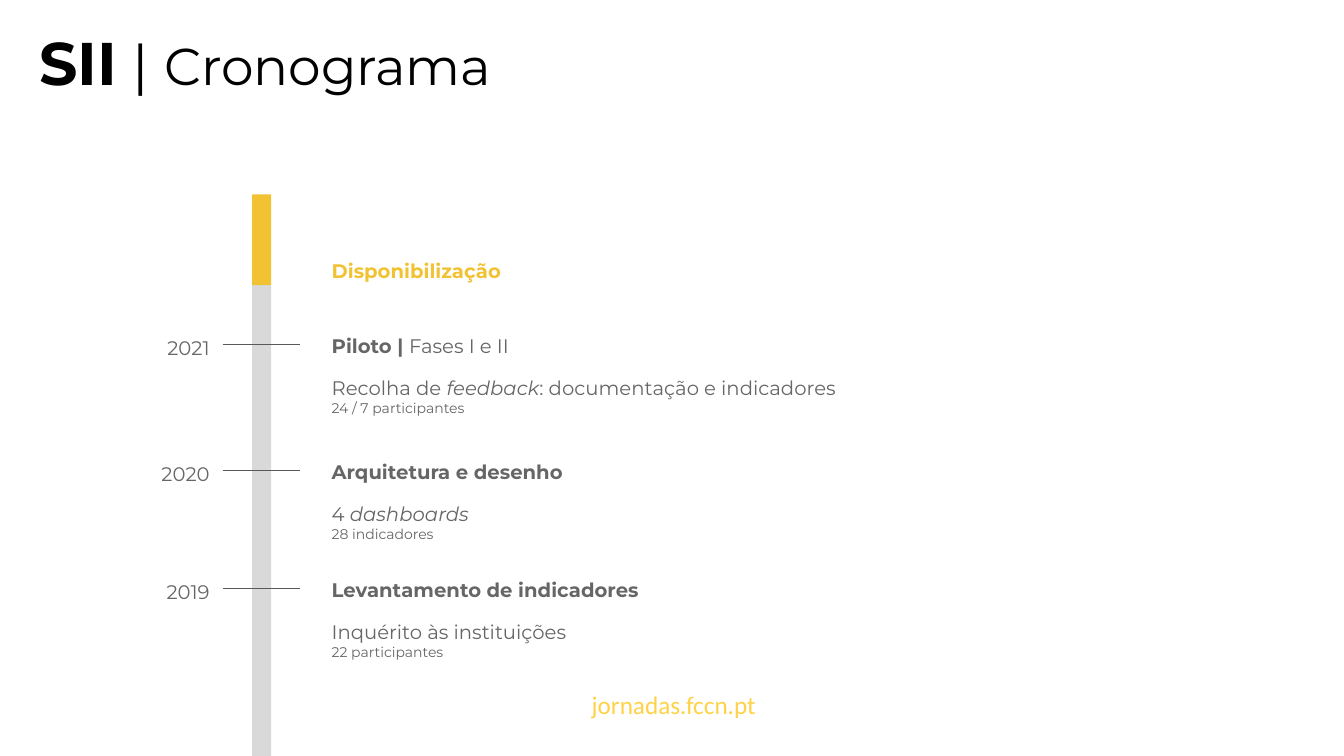
from dataclasses import dataclass

from lxml import etree
from pptx import Presentation
from pptx.dml.color import RGBColor
from pptx.enum.shapes import MSO_CONNECTOR, MSO_SHAPE
from pptx.enum.text import MSO_ANCHOR as Anchor, PP_ALIGN as Align
from pptx.oxml.ns import qn
from pptx.util import Emu, Pt

PX = 9144  # EMU per px, 100 px to the inch
COLORS = {
    "title": "000000",
    "text": "666666",
    "tick": "595959",
    "bar": "D9D9D9",
    "accent": "F1C232",
    "footer": "FFD246",
}
BAR_X, BAR_W = 250, 19
TICK_X1, TICK_X2 = 221, 298
TEXT_X = 316


@dataclass(frozen=True)
class Span:
    text: str
    size: int = 14
    bold: bool = False
    italic: bool = False
    color: str = "text"
    font: str = "Montserrat"


@dataclass(frozen=True)
class Box:
    x: int
    y: int
    w: int
    h: int

    def emu(self) -> list[Emu]:
        return [px(v) for v in (self.x, self.y, self.w, self.h)]


@dataclass(frozen=True)
class Milestone:
    year: str
    y: int
    heading: list[Span]
    detail: list[Span]
    note: str


MILESTONES = [
    Milestone("2021", 342, [Span("Piloto | ", bold=True), Span("Fases I e II")],
              [Span("Recolha de "), Span("feedback", italic=True),
               Span(": documentação e indicadores")],
              "24 / 7 participantes"),
    Milestone("2020", 467, [Span("Arquitetura e desenho", bold=True)],
              [Span("4 "), Span("dashboards", italic=True)],
              "28 indicadores"),
    Milestone("2019", 584, [Span("Levantamento de indicadores", bold=True)],
              [Span("Inquérito às instituições")],
              "22 participantes"),
]


def px(value: int) -> Emu:
    return Emu(value * PX)


def rgb(name: str) -> RGBColor:
    return RGBColor.from_string(COLORS[name])


def add_text(slide, box: Box, lines: list[list[Span]], inset: tuple[int, int] = (13, 13),
             anchor=Anchor.TOP, align=Align.LEFT, spacing: float = 1.0) -> None:
    """Add a text box with one paragraph per list of spans."""
    tf = slide.shapes.add_textbox(*box.emu()).text_frame
    tf.word_wrap = True
    tf.vertical_anchor = anchor
    tf.margin_left = tf.margin_right = px(inset[0])
    tf.margin_top = tf.margin_bottom = px(inset[1])
    for i, spans in enumerate(lines):
        p = tf.add_paragraph() if i else tf.paragraphs[0]
        p.alignment, p.line_spacing = align, spacing
        for span in spans:
            r = p.add_run()
            r.text = span.text
            r.font.name, r.font.size = span.font, Pt(span.size)
            r.font.bold, r.font.italic = span.bold, span.italic
            r.font.color.rgb = rgb(span.color)


def add_heading(slide, y: int, spans: list[Span]) -> None:
    add_text(slide, Box(TEXT_X, y, 534, 40), [spans], anchor=Anchor.MIDDLE, spacing=1.15)


def add_bar(slide, y: int, h: int, color: str) -> None:
    sp = slide.shapes.add_shape(MSO_SHAPE.RECTANGLE, *Box(BAR_X, y, BAR_W, h).emu())
    sp.shadow.inherit = False
    sp.fill.solid()
    sp.fill.fore_color.rgb = rgb(color)
    sp.line.fill.background()


def add_tick(slide, y: int) -> None:
    line = slide.shapes.add_connector(
        MSO_CONNECTOR.STRAIGHT, px(TICK_X1), px(y), px(TICK_X2), px(y))
    line.line.color.rgb = rgb("tick")
    line.line.width = Pt(0.75)
    etree.SubElement(line._element.spPr, qn("a:effectLst"))


def add_milestone(slide, m: Milestone) -> None:
    add_text(slide, Box(127, m.y - 25, 94, 51), [[Span(m.year)]],
             align=Align.RIGHT, spacing=1.15)
    add_heading(slide, m.y - 21, m.heading)
    add_text(slide, Box(TEXT_X, m.y + 18, 613, 60), [m.detail, [Span(m.note, size=10)]])
    add_tick(slide, m.y)


def main() -> None:
    prs = Presentation()
    prs.slide_width, prs.slide_height = px(1333), px(750)
    slide = prs.slides.add_slide(prs.slide_layouts[6])

    add_text(slide, Box(577, 679, 185, 40),
             [[Span("jornadas.fccn.pt", size=18, color="footer", font="Calibri")]],
             inset=(10, 5))
    add_text(slide, Box(26, 16, 1269, 90),
             [[Span("SII", 43, bold=True, color="title"),
               Span(" ", 40, bold=True, color="title"),
               Span("| ", 40, color="title"),
               Span("Cronograma", 37, color="title")]],
             inset=(13, 7), anchor=Anchor.MIDDLE)

    add_bar(slide, 605, 145, "bar")
    add_bar(slide, 282, 323, "bar")
    add_bar(slide, 193, 90, "accent")
    add_heading(slide, 247, [Span("Disponibilização", bold=True, color="accent")])
    for milestone in MILESTONES:
        add_milestone(slide, milestone)

    prs.save("out.pptx")


if __name__ == "__main__":
    main()
